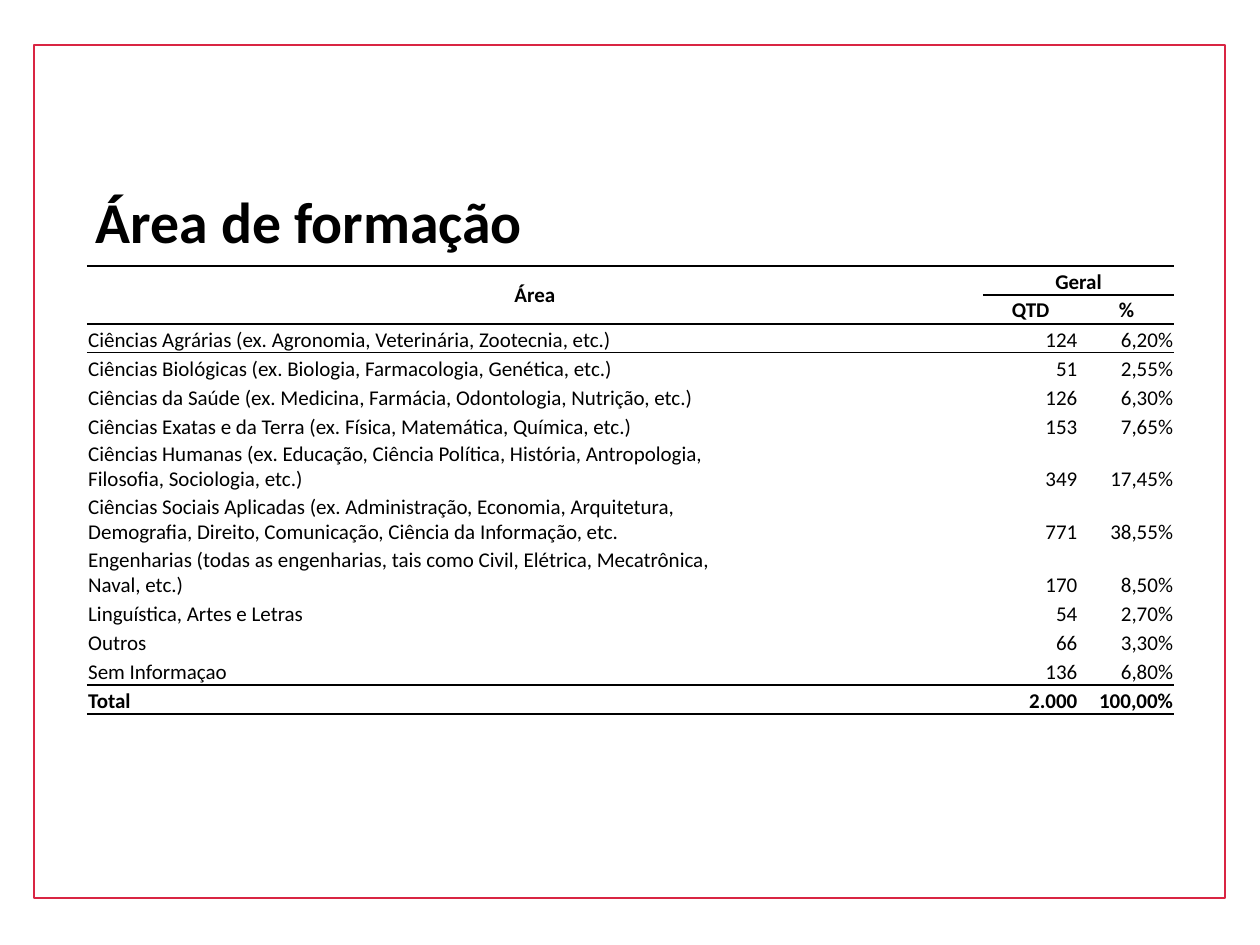
from lxml.etree import SubElement
from pptx import Presentation
from pptx.dml.color import RGBColor
from pptx.enum.shapes import MSO_SHAPE
from pptx.enum.text import MSO_ANCHOR, PP_ALIGN
from pptx.oxml.ns import qn
from pptx.util import Inches, Pt

COLORS = {"frame": "D92543", "text": "000000", "rule": "000000"}
FONT = "Calibri"
NO_STYLE = "{2D5ABB26-0587-4C30-8999-92F81FD0307C}"
COL_WIDTHS = [7.11, 0.76, 0.76]
LINE_HEIGHT, TWO_LINE_HEIGHT = 0.23, 0.42

# "\v" breaks a line inside a cell
ROWS = [
    ("Área", "Geral", ""),
    ("", "QTD", "%"),
    ("Ciências Agrárias (ex. Agronomia, Veterinária, Zootecnia, etc.)", "124", "6,20%"),
    ("Ciências Biológicas (ex. Biologia, Farmacologia, Genética, etc.)", "51", "2,55%"),
    ("Ciências da Saúde (ex. Medicina, Farmácia, Odontologia, Nutrição, etc.)", "126", "6,30%"),
    ("Ciências Exatas e da Terra (ex. Física, Matemática, Química, etc.)", "153", "7,65%"),
    ("Ciências Humanas (ex. Educação, Ciência Política, História, Antropologia,\v"
     "Filosofia, Sociologia, etc.)", "349", "17,45%"),
    ("Ciências Sociais Aplicadas (ex. Administração, Economia, Arquitetura,\v"
     "Demografia, Direito, Comunicação, Ciência da Informação, etc.", "771", "38,55%"),
    ("Engenharias (todas as engenharias, tais como Civil, Elétrica, Mecatrônica,\v"
     "Naval, etc.)", "170", "8,50%"),
    ("Linguística, Artes e Letras", "54", "2,70%"),
    ("Outros", "66", "3,30%"),
    ("Sem Informaçao", "136", "6,80%"),
    ("Total", "2.000", "100,00%"),
]
HEADER_ROWS = 2
TOTAL = len(ROWS) - 1


def format_runs(p, size, bold):
    for r in p.runs:
        r.font.name = FONT
        r.font.size = Pt(size)
        r.font.bold = bold
        r.font.color.rgb = RGBColor.from_string(COLORS["text"])


def add_border(cell, side, width=1):
    ln = SubElement(cell._tc.get_or_add_tcPr(), qn(f"a:ln{side}"), w=str(Pt(width)))
    fill = SubElement(ln, qn("a:solidFill"))
    SubElement(fill, qn("a:srgbClr"), val=COLORS["rule"])


def add_frame(slide, left, top, width, height):
    s = slide.shapes.add_shape(MSO_SHAPE.RECTANGLE, left, top, width, height)
    s.shadow.inherit = False
    s.fill.background()
    s.line.color.rgb = RGBColor.from_string(COLORS["frame"])
    s.line.width = Pt(1)


def add_title(slide, left, top, width, height):
    tf = slide.shapes.add_textbox(left, top, width, height).text_frame
    tf.word_wrap = True
    tf.vertical_anchor = MSO_ANCHOR.MIDDLE
    tf.margin_left = tf.margin_right = tf.margin_top = tf.margin_bottom = Inches(0.07)
    tf.text = "Área de formação"
    p = tf.paragraphs[0]
    p.line_spacing = 0.9
    format_runs(p, 33, True)


def fill_cell(cell, text, row, col):
    header = row < HEADER_ROWS
    cell.margin_left = cell.margin_right = cell.margin_top = Inches(0.01)
    cell.margin_bottom = 0
    centred = row == 1 or (row == 0 and col == 0)
    cell.vertical_anchor = MSO_ANCHOR.MIDDLE if centred else MSO_ANCHOR.BOTTOM
    # Rules above and below the headings and the total
    if row in (0, HEADER_ROWS, TOTAL) or (row == 1 and col > 0):
        add_border(cell, "T")
    if row in (0, 1, TOTAL - 1, TOTAL):
        add_border(cell, "B")
    elif row == HEADER_ROWS and col > 0:
        add_border(cell, "B", 0.5)
    cell.fill.background()
    cell.text_frame.text = text
    p = cell.text_frame.paragraphs[0]
    if header:
        p.alignment = PP_ALIGN.CENTER
    else:
        p.alignment = PP_ALIGN.RIGHT if col else PP_ALIGN.LEFT
    format_runs(p, 12, header or row == TOTAL)


def add_area_table(slide, left, top):
    heights = [TWO_LINE_HEIGHT if "\v" in row[0] else LINE_HEIGHT for row in ROWS]
    table = slide.shapes.add_table(len(ROWS), len(COL_WIDTHS), left, top,
                                   Inches(sum(COL_WIDTHS)), Inches(sum(heights))).table
    table.first_row = table.horz_banding = False
    table._tbl.tblPr.find(qn("a:tableStyleId")).text = NO_STYLE
    for column, width in zip(table.columns, COL_WIDTHS):
        column.width = Inches(width)
    for i, (height, values) in enumerate(zip(heights, ROWS)):
        table.rows[i].height = Inches(height)
        for j, text in enumerate(values):
            fill_cell(table.cell(i, j), text, i, j)
    # "Área" spans both heading rows, "Geral" both value columns
    table.cell(0, 0).merge(table.cell(1, 0))
    table.cell(0, 1).merge(table.cell(0, 2))


def main():
    prs = Presentation()
    prs.slide_width, prs.slide_height = Inches(10), Inches(7.5)
    slide = prs.slides.add_slide(prs.slide_layouts[6])
    add_frame(slide, Inches(0.27), Inches(0.36), Inches(9.45), Inches(6.77))
    add_title(slide, Inches(0.69), Inches(1.24), Inches(8.62), Inches(1.09))
    add_area_table(slide, Inches(0.69), Inches(2.11))
    prs.save("out.pptx")


if __name__ == "__main__":
    main()
